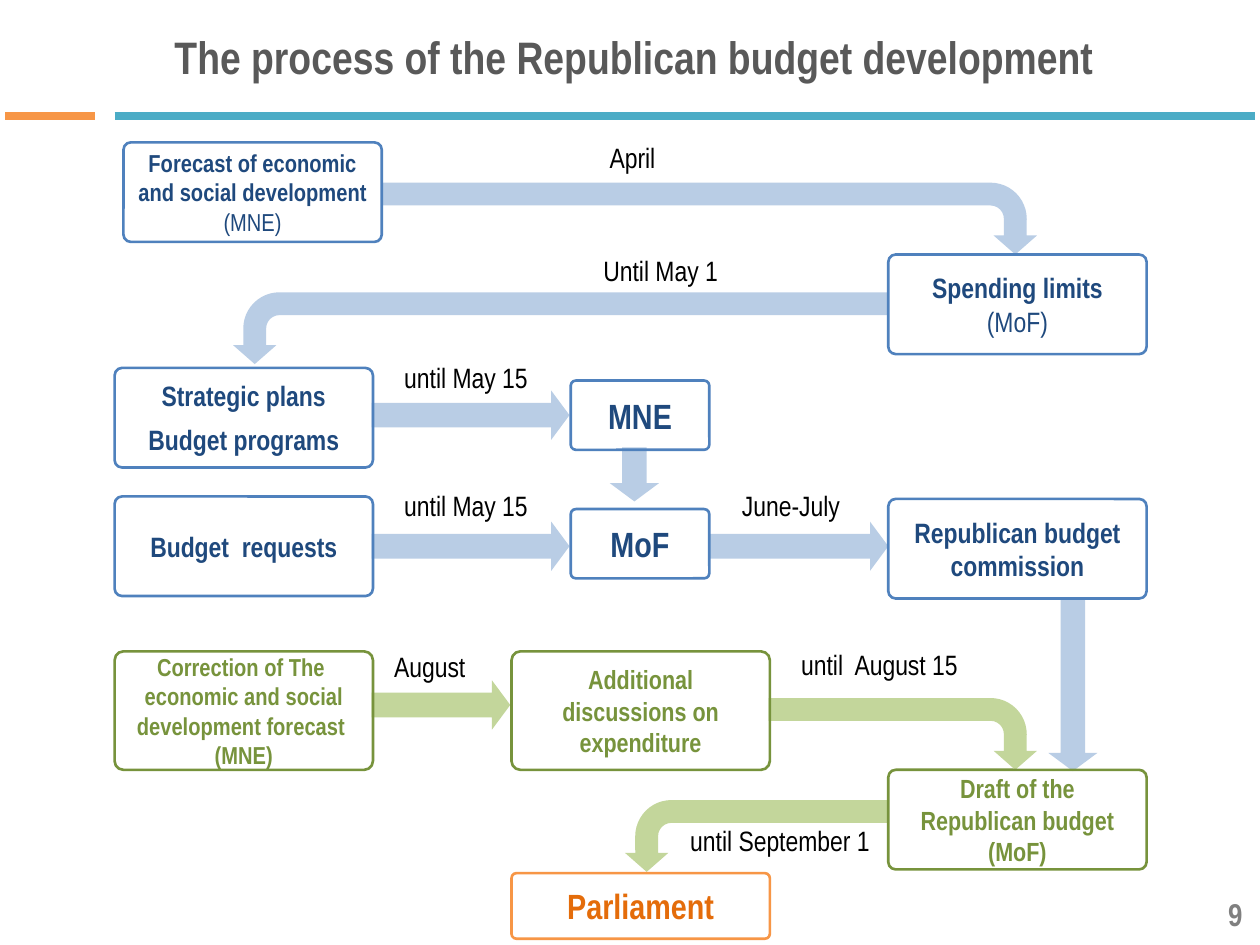
from collections import namedtuple

from lxml import etree
from pptx import Presentation
from pptx import util as u
from pptx.dml.color import RGBColor
from pptx.enum import shapes, text
from pptx.oxml import ns

PX = 9144
FONT = "Arial Narrow"
BLACK = RGBColor(0x00, 0x00, 0x00)
TITLE_GRAY = RGBColor(0x59, 0x59, 0x59)
NUMBER_GRAY = RGBColor(0x80, 0x80, 0x80)
TEAL = RGBColor(0x4B, 0xAC, 0xC6)
ORANGE = RGBColor(0xF7, 0x96, 0x46)
DARK_ORANGE = RGBColor(0xE4, 0x6C, 0x0A)
BLUE = RGBColor(0x4F, 0x81, 0xBD)
NAVY = RGBColor(0x1F, 0x49, 0x7D)
PALE_BLUE = RGBColor(0xB9, 0xCD, 0xE5)
GREEN = RGBColor(0x77, 0x93, 0x3C)
PALE_GREEN = RGBColor(0xC3, 0xD6, 0x9B)

STRAIGHT = (0.5, 0.371)
BENT = (0.318, 0.302, 0.264, 0.504)
STAGE_W, STAGE_H = 205, 79


class Box(namedtuple("Box", "x y w h")):
    def inner(self, x, y, w, h):
        return Box(self.x + x, self.y + y, w, h)

    def emu(self):
        return [int(value * PX) for value in self]


def style(paragraph, size, color, bold=False, align=text.PP_ALIGN.CENTER):
    paragraph.alignment = align
    font = paragraph.font
    font.name, font.size, font.bold = FONT, u.Pt(size), bold
    font.color.rgb = color


def adjust(shape, values):
    for index, value in enumerate(values):
        shape.adjustments[index] = value


def stage(slide, box, lines, size, color, border, note="", after=0):
    shape = slide.shapes.add_shape(shapes.MSO_SHAPE.ROUNDED_RECTANGLE, *box.emu())
    shape.shadow.inherit = False
    adjust(shape, [0.074])
    shape.fill.background()
    shape.line.color.rgb = border
    shape.line.width = u.Pt(1.5)
    frame = shape.text_frame
    frame.word_wrap = True
    frame.vertical_anchor = text.MSO_ANCHOR.MIDDLE
    for index, line in enumerate(lines):
        paragraph = frame.paragraphs[0] if index == 0 else frame.add_paragraph()
        paragraph.add_run().text = line
        style(paragraph, size, color, True)
        paragraph.space_after = u.Pt(after)
    if note:
        run = paragraph.add_run()
        run.text = note
        run.font.bold = False


def arrow(slide, box, preset, adjustments, color, rotation=0, mirrored=False):
    w, h = (box.h, box.w) if rotation else (box.w, box.h)
    turned = Box(box.x + (box.w - w) / 2, box.y + (box.h - h) / 2, w, h)
    shape = slide.shapes.add_shape(preset, *turned.emu())
    shape.shadow.inherit = False
    adjust(shape, adjustments)
    shape.rotation = rotation
    if mirrored:
        shape._element.spPr.find(ns.qn("a:xfrm")).set("flipH", "1")
    shape.fill.solid()
    shape.fill.fore_color.rgb = color
    shape.line.fill.background()


def straight_arrow(slide, box, color, rotation=0):
    arrow(slide, box, shapes.MSO_SHAPE.RIGHT_ARROW, STRAIGHT, color, rotation)


def bent_arrow(slide, box, color, leftward=False):
    rotation = 270 if leftward else 90
    arrow(slide, box, shapes.MSO_SHAPE.BENT_ARROW, BENT, color, rotation, leftward)


def deadline(slide, box, wording):
    frame = slide.shapes.add_textbox(*box.emu()).text_frame
    frame.word_wrap = False
    frame.auto_size = text.MSO_AUTO_SIZE.SHAPE_TO_FIT_TEXT
    frame.text = wording
    style(frame.paragraphs[0], 16, BLACK, align=text.PP_ALIGN.LEFT)


def rule(slide, box, color):
    x, y, w, _ = box.emu()
    line = slide.shapes.add_connector(shapes.MSO_CONNECTOR.STRAIGHT, x, y, x + w, y)
    line.line.color.rgb = color
    line.line.width = u.Pt(4.5)
    etree.SubElement(line._element.spPr, ns.qn("a:effectLst"))


def header(slide, box):
    title = slide.shapes.title
    title.left, title.top, title.width, title.height = box.inner(31, 0, 937, 63).emu()
    frame = title.text_frame
    frame.text = "The process of the Republican budget development"
    frame.vertical_anchor = text.MSO_ANCHOR.MIDDLE
    style(frame.paragraphs[0], 26, TITLE_GRAY, True)
    frame.paragraphs[0].space_after = u.Pt(6)
    rule(slide, box.inner(87, 79, 905, 0), TEAL)
    rule(slide, box.inner(0, 79, 71, 0), ORANGE)


def page_number(slide, box):
    frame = slide.shapes.add_textbox(*box.emu()).text_frame
    frame.word_wrap = True
    frame.vertical_anchor = text.MSO_ANCHOR.MIDDLE
    frame.text = "9"
    style(frame.paragraphs[0], 18, NUMBER_GRAY, True, text.PP_ALIGN.RIGHT)


def planning(slide, box):
    bent_arrow(slide, box.inner(212, 38, 520, 57), PALE_BLUE)
    bent_arrow(slide, box.inner(94, 125, 520, 57), PALE_BLUE, leftward=True)
    for x, y, w in ((204, 203, 157), (204, 307, 157), (472, 307, 142)):
        straight_arrow(slide, box.inner(x, y, w, 39), PALE_BLUE)
    for x, y, h in ((393, 248, 43), (741, 367, 138)):
        straight_arrow(slide, box.inner(x, y, 39, h), PALE_BLUE, rotation=90)

    for x, y, w, wording in (
        (383, 0, 57, "April"),
        (378, 89, 112, "Until May 1"),
        (220, 174, 122, "until May 15"),
        (220, 276, 122, "until May 15"),
        (488, 276, 99, "June-July"),
    ):
        deadline(slide, box.inner(x, y, w, 37), wording)

    for x, y, lines, size, note, after in (
        (7, 6, ["Forecast of economic and social development "], 14, "(MNE)", 0),
        (614, 95, ["Spending limits "], 16, "(MoF)", 0),
        (0, 185, ["Strategic plans", "Budget programs"], 16, "", 6),
        (0, 287, ["Budget  requests"], 16, "", 0),
        (614, 289, ["Republican budget commission"], 16, "", 0),
    ):
        place = box.inner(x, y, STAGE_W, STAGE_H)
        stage(slide, place, lines, size, NAVY, BLUE, note, after)
    for y, ministry in ((195, "MNE"), (297, "MoF")):
        stage(slide, box.inner(362, y, 110, 55), [ministry], 20, NAVY, BLUE)


def approval(slide, box):
    straight_arrow(slide, box.inner(204, 31, 110, 39), PALE_GREEN)
    bent_arrow(slide, box.inner(519, 45, 213, 57), PALE_GREEN)
    bent_arrow(slide, box.inner(405, 126, 209, 57), PALE_GREEN, leftward=True)

    for x, y, w, wording in (
        (212, 2, 77, "August"),
        (535, 0, 149, "until  August 15"),
        (447, 140, 167, "until September 1"),
    ):
        deadline(slide, box.inner(x, y, w, 37), wording)

    correction = "Correction of The  economic and social development forecast  (МNE)"
    for x, y, h, wording, size, color, border in (
        (0, 8, 94, correction, 14, GREEN, GREEN),
        (315, 8, 94, "Additional discussions on expenditure", 15, GREEN, GREEN),
        (614, 102, STAGE_H, "Draft of the Republican budget (МoF)", 15, GREEN, GREEN),
        (315, 184, 52, "Parliament", 20, DARK_ORANGE, ORANGE),
    ):
        stage(slide, box.inner(x, y, STAGE_W, h), [wording], size, color, border)


def main():
    deck = Presentation()
    deck.slide_width, deck.slide_height = 1000 * PX, 750 * PX
    slide = deck.slides.add_slide(deck.slide_layouts[5])
    header(slide, Box(4, 13, 992, 79))
    planning(slide, Box(91, 107, 819, 505))
    approval(slide, Box(91, 509, 819, 236))
    page_number(slide, Box(763, 705, 233, 40))
    deck.save("out.pptx")


if __name__ == "__main__":
    main()
